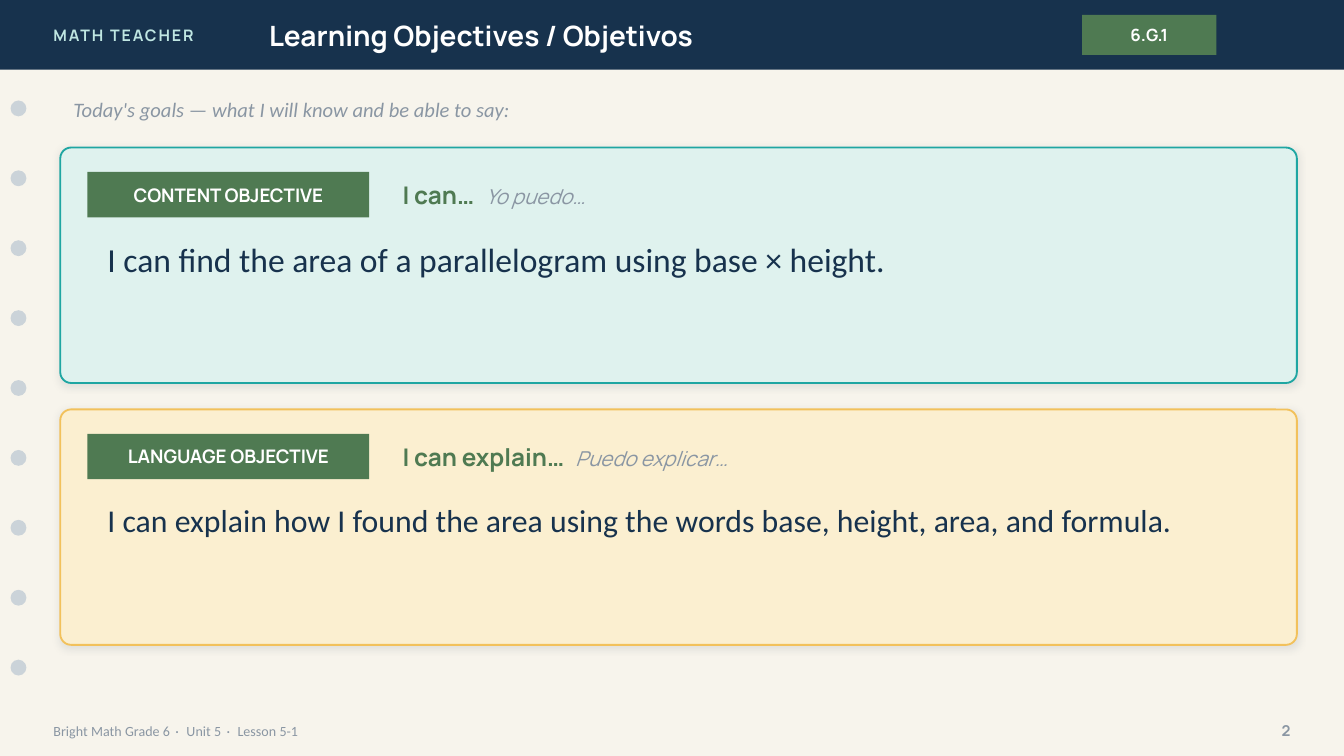
from lxml.etree import SubElement
from pptx import Presentation
from pptx.dml.color import RGBColor
from pptx.enum.shapes import MSO_SHAPE
from pptx.enum.text import MSO_ANCHOR, MSO_AUTO_SIZE, PP_ALIGN
from pptx.oxml.ns import qn
from pptx.util import Cm, Pt

COLORS = {
    "paper": "F7F4EC", "navy": "17324D", "mint": "BFE6E2", "white": "FFFFFF",
    "green": "4F7A52", "dot": "CBD3D9", "gray": "8A96A3", "shadow": "1C2E42",
    "teal": "1FA6A2", "teal_pale": "DFF2EE", "gold": "F2C15B", "gold_pale": "FBEFD0",
}
HEAD, BODY = "Manrope", "Calibri"
WIDTH, HEIGHT = 25.4, 14.29


def rgb(name):
    return RGBColor.from_string(COLORS[name])


def add_run(p, text, size, color, font=HEAD, bold=False, italic=False, spacing=0):
    r = p.add_run()
    r.text = text
    r.font.size, r.font.name = Pt(size), font
    r.font.bold, r.font.italic = bold, italic
    r.font.color.rgb = rgb(color)
    if spacing:
        r._r.get_or_add_rPr().set("spc", str(round(spacing * 100)))


def write(sp, text, align=PP_ALIGN.LEFT, anchor=MSO_ANCHOR.MIDDLE, line=None, **fmt):
    """Fill a shape with one formatted paragraph and return it."""
    tf = sp.text_frame
    tf.word_wrap, tf.auto_size = True, MSO_AUTO_SIZE.NONE
    tf.vertical_anchor = anchor
    p = tf.paragraphs[0]
    p.alignment = align
    if line:
        p.line_spacing = line
    add_run(p, text, **fmt)
    return p


def add_text(s, box, text, **fmt):
    return write(s.shapes.add_textbox(*map(Cm, box)), text, **fmt)


def add_block(s, box, fill, kind=MSO_SHAPE.RECTANGLE):
    sp = s.shapes.add_shape(kind, *map(Cm, box))
    sp.shadow.inherit = False
    sp.fill.solid()
    sp.fill.fore_color.rgb = rgb(fill)
    sp.line.fill.background()
    return sp


def add_tag(s, box, text, size):
    write(add_block(s, box, "green"), text, align=PP_ALIGN.CENTER,
          size=size, color="white", bold=True)


def add_soft_shadow(sp):
    effects = sp.element.spPr.find(qn("a:effectLst"))
    shadow = SubElement(effects, qn("a:outerShdw"), blurRad=str(Pt(4)),
                        dist=str(Pt(1)), dir="5400000", algn="bl", rotWithShape="0")
    color = SubElement(shadow, qn("a:srgbClr"), val=COLORS["shadow"])
    SubElement(color, qn("a:alpha"), val="10000")


def header(s, box, brand, title, standard):
    x, y, w, h = box
    add_block(s, box, "navy")
    add_text(s, (x + 0.76, y, 6.1, h), brand, size=8.5, color="mint", bold=True, spacing=1)
    sp = s.shapes.title
    sp.element.getparent().append(sp.element)  # bring in front of the bar
    sp.left, sp.top, sp.width, sp.height = map(Cm, (x + 4.83, y, 14.22, h))
    write(sp, title, size=15, color="white", bold=True)
    add_tag(s, (x + 20.45, y + 0.28, 2.54, 0.76), standard, 9)


def binder_dots(s, box, count):
    x, y, w, h = box
    step = (h - w) / (count - 1)
    for i in range(count):
        add_block(s, (x, y + i * step, w, w), "dot", MSO_SHAPE.OVAL)


def objective_card(s, box, fill, border, tag, lead, lead_es, goal, size):
    x, y, w, h = box
    sp = add_block(s, box, fill, MSO_SHAPE.ROUNDED_RECTANGLE)
    sp.adjustments[0] = 0.046
    sp.line.color.rgb = rgb(border)
    sp.line.width = Pt(1)
    add_soft_shadow(sp)
    add_tag(s, (x + 0.51, y + 0.46, 5.33, 0.86), tag, 10)
    p = add_text(s, (x + 6.22, y + 0.46, w - 6.61, 0.86), lead,
                 size=13, color="green", bold=True)
    add_run(p, " ", size=13, color="green", bold=True, spacing=3.5)
    add_run(p, lead_es, size=11, color="gray", italic=True)
    add_text(s, (x + 0.64, y + 1.57, w - 1.27, 2.54), goal, anchor=MSO_ANCHOR.TOP,
             line=1.05, size=size, color="navy", font=BODY)


def footer(s, box, parts, number):
    x, y, w, h = box
    fmt = dict(size=7.5, color="gray", font=BODY)
    p = add_text(s, (x, y, 17.78, h), parts[0], **fmt)
    for part in parts[1:]:
        add_run(p, " · ", spacing=1.13, **fmt)
        add_run(p, part, **fmt)
    add_text(s, (x + w - 1.27, y, 1.27, h), number, align=PP_ALIGN.RIGHT,
             size=8, color="gray", bold=True)


def main():
    prs = Presentation()
    prs.slide_width, prs.slide_height = Cm(WIDTH), Cm(HEIGHT)
    s = prs.slides.add_slide(prs.slide_layouts[5])
    s.background.fill.solid()
    s.background.fill.fore_color.rgb = rgb("paper")

    header(s, (0, 0, WIDTH, 1.32), "MATH TEACHER", "Learning Objectives / Objetivos", "6.G.1")
    binder_dots(s, (0.2, 1.9, 0.3, 10.87), 9)
    footer(s, (0.76, 13.46, 23.88, 0.71), ["Bright Math Grade 6", "Unit 5", "Lesson 5-1"], "2")

    left, width = 1.14, 23.37
    add_text(s, (left, 1.68, width, 0.76),
             "Today's goals — what I will know and be able to say:",
             size=11, color="gray", font=BODY, italic=True)
    cards = [
        ("teal_pale", "teal", "CONTENT OBJECTIVE", "I can…", "Yo puedo…",
         "I can find the area of a parallelogram using base × height.", 18),
        ("gold_pale", "gold", "LANGUAGE OBJECTIVE", "I can explain…", "Puedo explicar…",
         "I can explain how I found the area using the words base, height, area, and formula.",
         17),
    ]
    for i, card in enumerate(cards):
        objective_card(s, (left, 2.79 + i * 4.95, width, 4.45), *card)
    prs.save("out.pptx")


if __name__ == "__main__":
    main()
